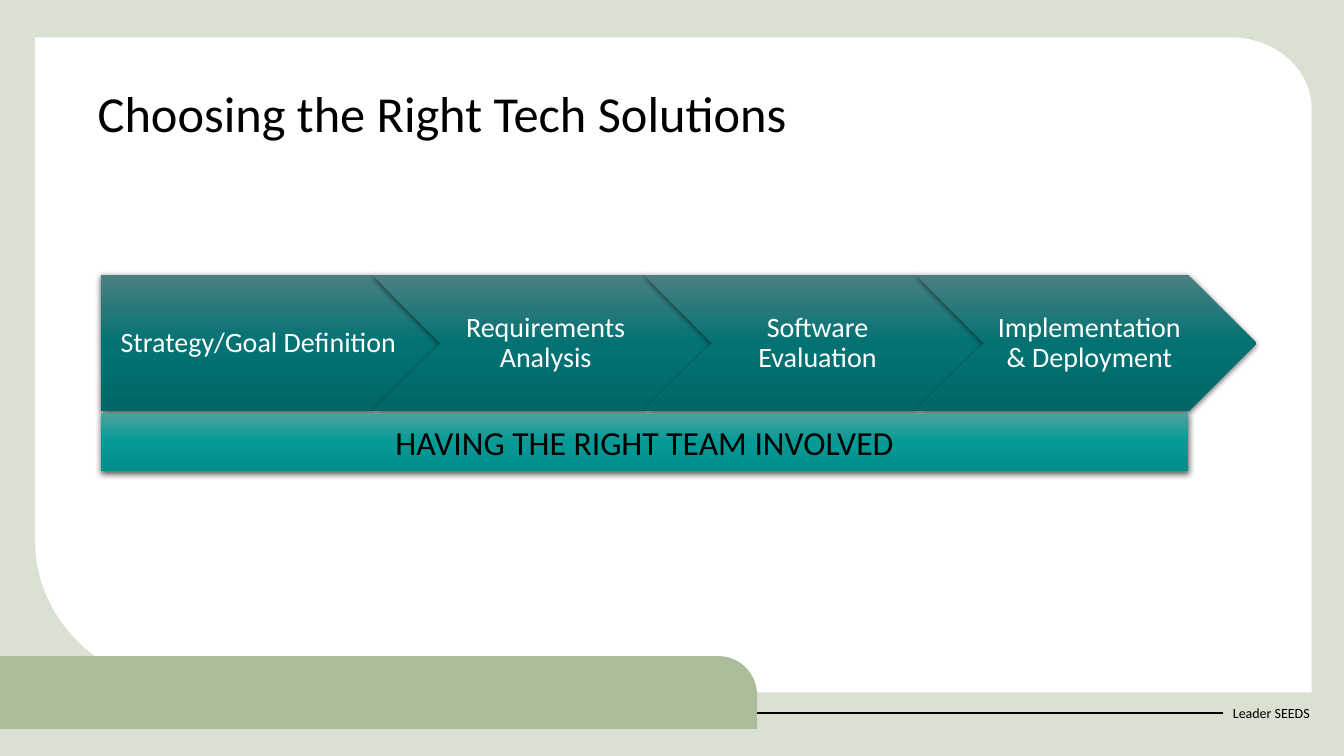
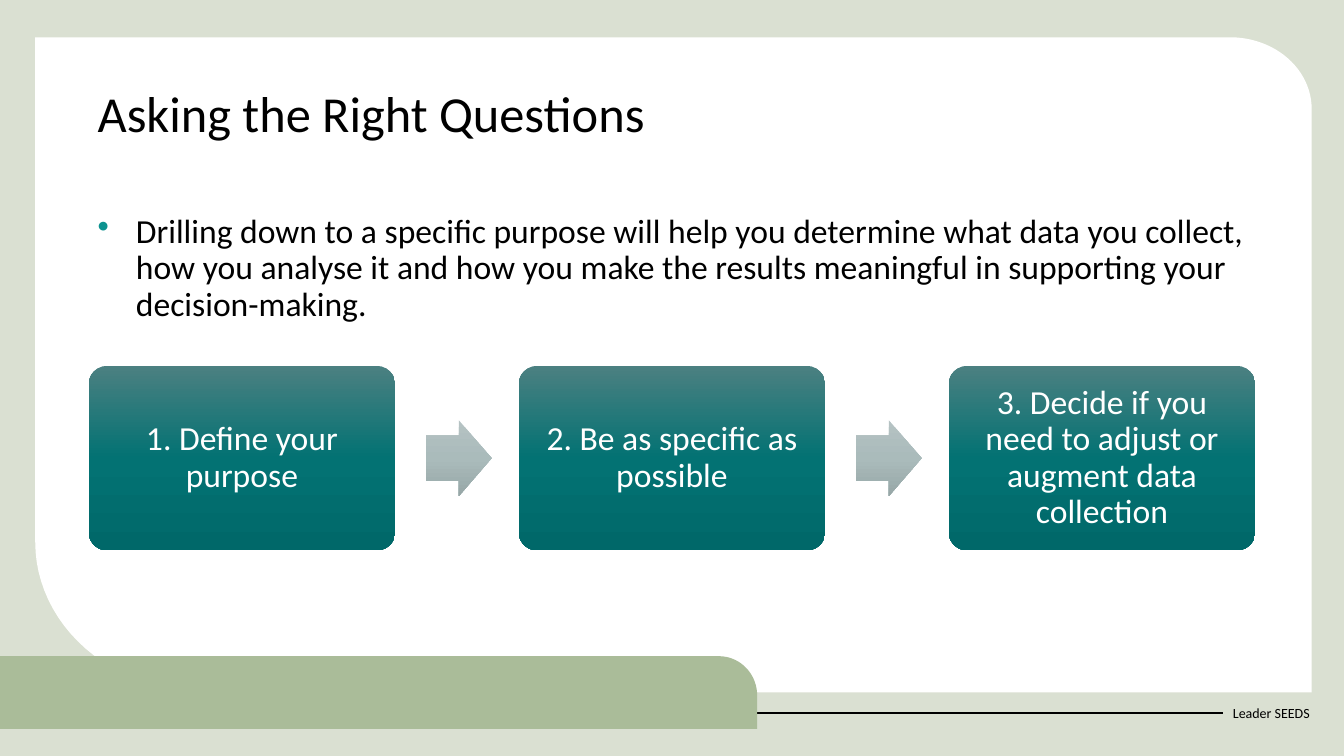
from dataclasses import dataclass
from math import cos, pi, sin

from lxml import etree
from pptx import Presentation
from pptx.dml.color import RGBColor
from pptx.enum.shapes import MSO_CONNECTOR, MSO_SHAPE
from pptx.enum.text import MSO_ANCHOR, PP_ALIGN
from pptx.oxml.ns import qn
from pptx.util import Inches, Pt

CHEVRON, PENTAGON = MSO_SHAPE.CHEVRON, MSO_SHAPE.PENTAGON
RECTANGLE, ROUNDED = MSO_SHAPE.RECTANGLE, MSO_SHAPE.ROUNDED_RECTANGLE
RIGHT_ARROW = MSO_SHAPE.RIGHT_ARROW
STRAIGHT = MSO_CONNECTOR.STRAIGHT
TOP, MIDDLE = MSO_ANCHOR.TOP, MSO_ANCHOR.MIDDLE
LEFT, CENTER = PP_ALIGN.LEFT, PP_ALIGN.CENTER


@dataclass(frozen=True)
class Theme:
    font: str = "Calibri"
    sage: str = "DAE0D2"
    tab: str = "AABC99"
    white: str = "FFFFFF"
    black: str = "000000"
    bullet: str = "0D9390"
    deep_teal: tuple = ("4B8081", "037273", "006869")
    teal: tuple = ("4BA19E", "069A96", "008E8B")
    grey: tuple = ("B5C2C3", "AABBBB", "97A7A7")
    title_size: int = 36
    body_size: int = 24
    step_size: int = 20
    footer_size: int = 10


THEME = Theme()
SLIDE_W, SLIDE_H = 13.33, 7.5
TEXT_LEFT, TEXT_W = 0.87, 11.59
INSETS = (0.1, 0.05, 0.1, 0.05)


def rgb(value):
    return RGBColor.from_string(value)


def inches(values):
    return [Inches(v) for v in values]


# Text
def write(shape, text, size, color, align=LEFT, anchor=TOP, spacing=0.9,
          insets=INSETS, bullet=False):
    frame = shape.text_frame
    frame.word_wrap = True
    frame.vertical_anchor = anchor
    (frame.margin_left, frame.margin_top,
     frame.margin_right, frame.margin_bottom) = inches(insets)
    paragraph = frame.paragraphs[0]
    paragraph.alignment = align
    paragraph.line_spacing = spacing
    if bullet:
        add_bullet(paragraph)
    run = paragraph.add_run()
    run.text = text
    run.font.name = THEME.font
    run.font.size = Pt(size)
    run.font.color.rgb = rgb(color)


def add_bullet(paragraph, indent=0.38):
    props = paragraph._p.get_or_add_pPr()
    props.set("marL", str(Inches(indent)))
    props.set("indent", str(-Inches(indent)))
    color = etree.SubElement(props, qn("a:buClr"))
    etree.SubElement(color, qn("a:srgbClr"), val=THEME.bullet)
    etree.SubElement(props, qn("a:buChar"), char="•")


def add_text(slide, box, text, size, **style):
    write(slide.shapes.add_textbox(*inches(box)), text, size, THEME.black, **style)


# Shapes
def strip_style(shape):
    shape.line.fill.background()
    shape.shadow.inherit = False


def add_gradient_shape(slide, kind, box, colors, adjustments=(), shadow=False):
    shape = slide.shapes.add_shape(kind, *inches(box))
    for index, value in enumerate(adjustments):
        shape.adjustments[index] = value
    shape.fill.gradient()
    shape.fill.gradient_angle = 270
    stops = shape._element.spPr.find(".//" + qn("a:gsLst"))
    stops[:] = []
    for index, color in enumerate(colors):
        stop = etree.SubElement(stops, qn("a:gs"), pos=str(index * 50000))
        etree.SubElement(stop, qn("a:srgbClr"), val=color)
    strip_style(shape)
    if shadow:
        add_shadow(shape)
    return shape


def add_shadow(shape):
    effects = shape._element.spPr.find(qn("a:effectLst"))
    outer = etree.SubElement(effects, qn("a:outerShdw"), blurRad=str(Pt(4.5)),
                             dist=str(Pt(1.5)), dir="5400000", rotWithShape="0")
    color = etree.SubElement(outer, qn("a:srgbClr"), val=THEME.black)
    etree.SubElement(color, qn("a:alpha"), val="63000")


def add_curved_panel(slide, box, color, top_right, bottom_left=(0, 0), steps=24):
    """Rectangle with elliptical corners, each given as (x radius, y radius)."""
    left, top, width, height = box
    right, bottom = left + width, top + height

    def corner(center_x, center_y, radii, start):
        angles = [start + pi / 2 * i / steps for i in range(steps + 1)]
        return [(center_x + radii[0] * cos(a), center_y + radii[1] * sin(a))
                for a in angles]

    outline = [(left, top)]
    outline += corner(right - top_right[0], top + top_right[1], top_right, -pi / 2)
    outline.append((right, bottom))
    outline += corner(left + bottom_left[0], bottom - bottom_left[1],
                      bottom_left, pi / 2)
    points = [inches(point) for point in outline]
    builder = slide.shapes.build_freeform(*points[0])
    builder.add_line_segments(points[1:], close=True)
    panel = builder.convert_to_shape()
    panel.fill.solid()
    panel.fill.fore_color.rgb = rgb(color)
    strip_style(panel)


def add_rule(slide, start, end, y):
    rule = slide.shapes.add_connector(STRAIGHT, *inches((start, y, end, y)))
    rule.line.color.rgb = rgb(THEME.black)
    rule.line.width = Pt(1.5)
    etree.SubElement(rule._element.spPr, qn("a:effectLst"))


# Shared frame: background, white panel, footer, green tab and title
def add_framed_slide(deck, title):
    slide = deck.slides.add_slide(deck.slide_layouts[6])
    background = slide.background.fill
    background.solid()
    background.fore_color.rgb = rgb(THEME.sage)
    add_curved_panel(slide, (0.35, 0.37, 12.66, 6.5), THEME.white,
                     top_right=(0.81, 0.71), bottom_left=(1.7, 1.49))
    add_text(slide, (12.13, 6.87, 1.01, 0.4), "Leader SEEDS", THEME.footer_size,
             anchor=MIDDLE, spacing=1.0)
    add_rule(slide, 0, 12.13, 7.07)
    add_curved_panel(slide, (0, 6.51, 7.51, 0.72), THEME.tab,
                     top_right=(0.38, 0.39))
    add_text(slide, (TEXT_LEFT, 0.83, TEXT_W, 0.88), title, THEME.title_size)
    return slide


# Chevron process: each step starts at 80% of the width of the one before
def add_process(slide, steps, left, top, span):
    width = span / (1 + 0.8 * (len(steps) - 1))
    pitch, height = 0.8 * width, 0.4 * width
    for index, label in enumerate(steps):
        kind, inset = (CHEVRON, 0.09) if index else (PENTAGON, 0.12)
        step = add_gradient_shape(slide, kind, (left + index * pitch, top, width, height),
                                  THEME.deep_teal, (0.5,), shadow=True)
        write(step, label, THEME.step_size, THEME.white, CENTER, MIDDLE,
              insets=(inset, 0.06, 0.03, 0.06))
    return pitch * len(steps)


def add_team_bar(slide, box, text):
    bar = add_gradient_shape(slide, RECTANGLE, box, THEME.teal, shadow=True)
    write(bar, text, THEME.body_size, THEME.black, CENTER, MIDDLE, spacing=1.0)


# Cards spread evenly over the span, with an arrow in every gap
def add_card_flow(slide, cards, left, top, span, card_w=3.04, card_h=1.83):
    arrow_w, arrow_h = 0.65, 0.75
    gap = (span - card_w * len(cards)) / (len(cards) - 1)
    for index, label in enumerate(cards):
        x = left + index * (card_w + gap)
        if index:
            arrow_box = (x - gap * 0.75, top + (card_h - arrow_h) / 2, arrow_w, arrow_h)
            add_gradient_shape(slide, RIGHT_ARROW, arrow_box, THEME.grey, (0.6, 0.5))
        card = add_gradient_shape(slide, ROUNDED, (x, top, card_w, card_h),
                                  THEME.deep_teal, (0.1,))
        write(card, label, THEME.body_size, THEME.white, CENTER, MIDDLE,
              insets=(0.1,) * 4)


def main():
    deck = Presentation()
    deck.slide_width, deck.slide_height = inches((SLIDE_W, SLIDE_H))

    # Technology choice
    solutions = add_framed_slide(deck, "Choosing the Right Tech Solutions")
    bar_w = add_process(solutions, [
        "Strategy/Goal Definition",
        "Requirements Analysis",
        "Software Evaluation",
        "Implementation & Deployment",
    ], left=1, top=2.73, span=11.46)
    add_team_bar(solutions, (1, 4.1, bar_w, 0.57), "HAVING THE RIGHT TEAM INVOLVED")

    # Questions to ask
    questions = add_framed_slide(deck, "Asking the Right Questions")
    add_text(questions, (TEXT_LEFT, 2.08, TEXT_W, 1.4),
             "Drilling down to a specific purpose will help you determine what data "
             "you collect, how you analyse it and how you make the results meaningful "
             "in supporting your decision-making.", THEME.body_size, bullet=True)
    add_card_flow(questions, [
        "1. Define your purpose",
        "2. Be as specific as possible",
        "3. Decide if you need to adjust or augment data collection",
    ], left=0.88, top=3.63, span=11.57)

    deck.save("out.pptx")


if __name__ == "__main__":
    main()
